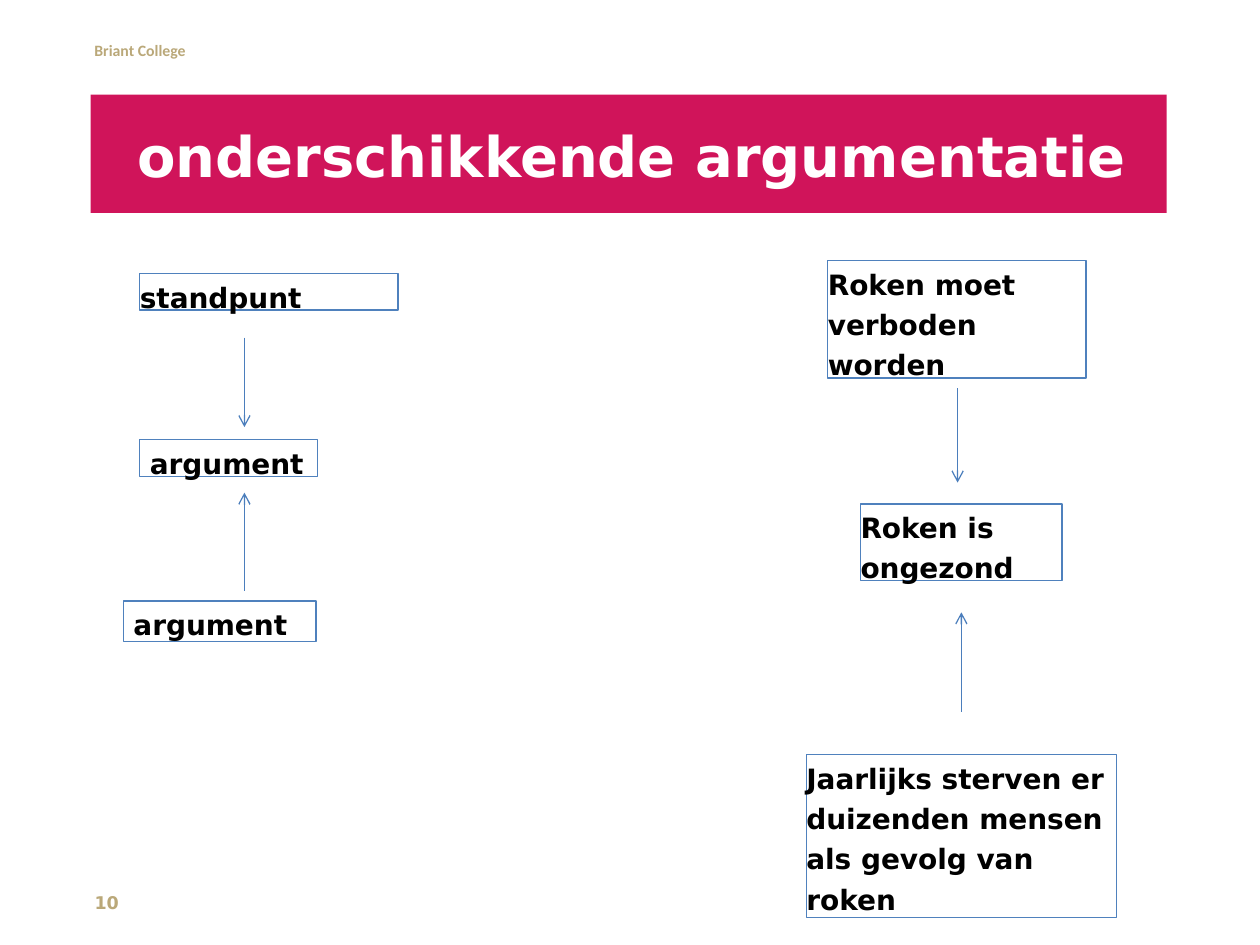
from lxml import etree
from pptx import Presentation
from pptx.dml.color import RGBColor
from pptx.enum.shapes import MSO_CONNECTOR, MSO_SHAPE
from pptx.enum.text import MSO_ANCHOR, MSO_AUTO_SIZE, PP_ALIGN
from pptx.oxml.ns import qn
from pptx.util import Inches, Pt

RECT, STRAIGHT = MSO_SHAPE.RECTANGLE, MSO_CONNECTOR.STRAIGHT
TOP, MIDDLE = MSO_ANCHOR.TOP, MSO_ANCHOR.MIDDLE
LEFT, FIXED = PP_ALIGN.LEFT, MSO_AUTO_SIZE.NONE
SANS = "DejaVu Sans"


def rgb(value):
    return RGBColor.from_string(value)


def set_text(sp, text, size, color, margins, font=SANS, anchor=TOP):
    """Write one bold, left-aligned paragraph; margins are left, top, right, bottom."""
    tf = sp.text_frame
    tf.text = text
    tf.word_wrap, tf.auto_size, tf.vertical_anchor = True, FIXED, anchor
    (tf.margin_left, tf.margin_top,
     tf.margin_right, tf.margin_bottom) = map(Inches, margins)
    p = tf.paragraphs[0]
    p.alignment = LEFT
    p.font.name, p.font.size, p.font.bold = font, Pt(size), True
    p.font.color.rgb = rgb(color)
    return p


prs = Presentation()
prs.slide_width, prs.slide_height = Inches(10), Inches(7.5)
s = prs.slides.add_slide(prs.slide_layouts[5])

# Title band
title = s.shapes.title
title.left, title.top = Inches(0.72), Inches(0.75)
title.width, title.height = Inches(8.54), Inches(0.94)
title.fill.solid()
title.fill.fore_color.rgb = rgb("D0145A")
set_text(title, "onderschikkende argumentatie", 32, "FFFFFF",
         (0.37, 0.08, 0.28, 0.05), anchor=MIDDLE)

# Header and page number
for text, top, width, height, size, font, anchor in (
    ("Briant College", 0.27, 7.87, 0.25, 9, "Calibri", TOP),
    ("10", 7.06, 0.31, 0.2, 10, SANS, MIDDLE),
):
    sp = s.shapes.add_textbox(*map(Inches, (0.75, top, width, height)))
    set_text(sp, text, size, "BAA879", (0, 0.05, 0, 0.05), font, anchor)

# Scheme on the left, example on the right: text, box, left indent
for text, box, indent in (
    ("standpunt", (1.11, 2.17, 2.05, 0.29), 0),
    ("argument", (1.11, 3.49, 1.41, 0.29), 0.08),
    ("argument", (0.98, 4.77, 1.53, 0.32), 0.08),
    ("Roken moet verboden worden", (6.57, 2.07, 2.05, 0.93), 0),
    ("Roken is ongezond", (6.83, 4, 1.6, 0.61), 0),
    ("Jaarlijks sterven er duizenden mensen als gevolg van roken",
     (6.4, 5.99, 2.46, 1.29), 0),
):
    sp = s.shapes.add_shape(RECT, *map(Inches, box))
    sp.shadow.inherit = False
    sp.fill.background()
    sp.line.color.rgb = rgb("4F81BD")
    sp.line.width = Pt(0.75)
    p = set_text(sp, text, 16, "000000", (indent, 0, 0, 0))
    p.line_spacing = Pt(23)

# Vertical arrows: x, start, end
for x, start, end in (
    (1.94, 2.68, 3.39),
    (1.94, 4.69, 3.91),
    (7.6, 3.08, 3.83),
    (7.63, 5.65, 4.86),
):
    arrow = s.shapes.add_connector(STRAIGHT, *map(Inches, (x, start, x, end)))
    arrow.line.color.rgb = rgb("4B7EBC")
    arrow.line.width = Pt(0.75)
    etree.SubElement(arrow.line._get_or_add_ln(), qn("a:tailEnd"), type="arrow")
    etree.SubElement(arrow._element.spPr, qn("a:effectLst"))

prs.save("out.pptx")
